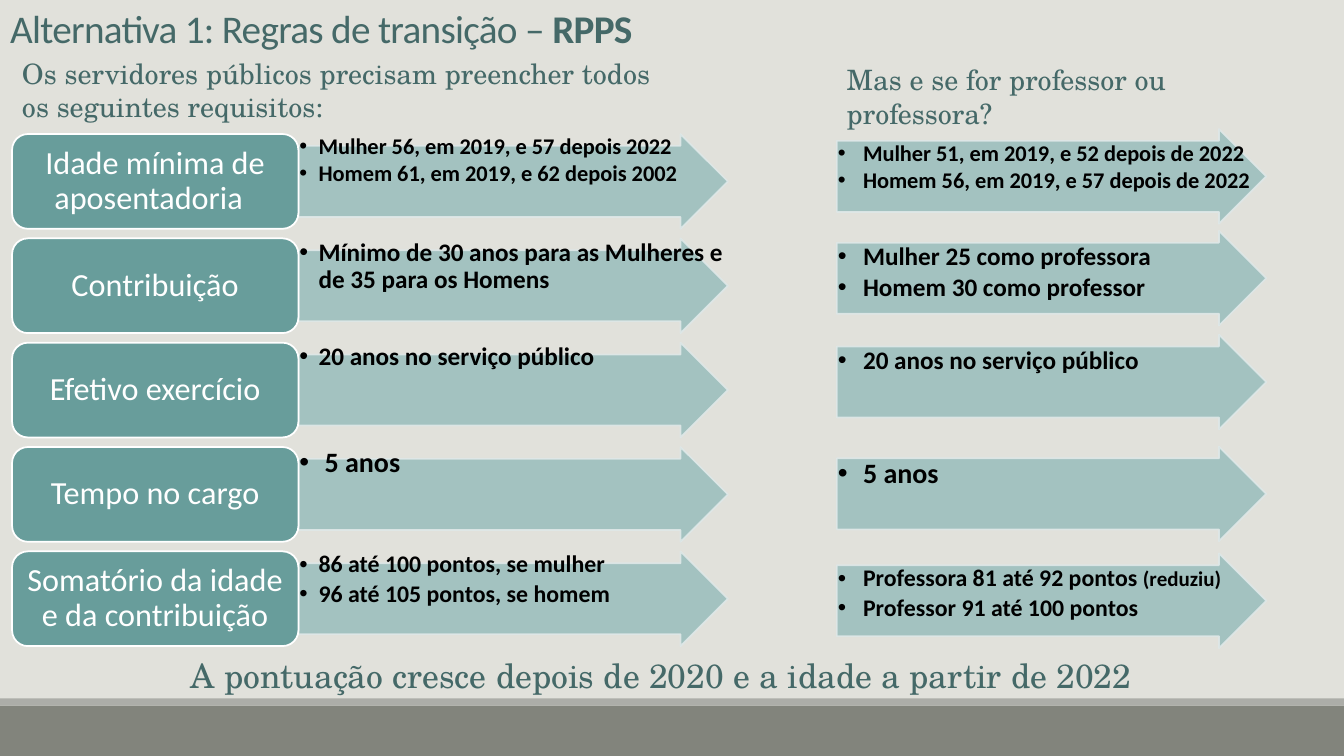
from lxml import etree
from pptx import Presentation
from pptx import util as u
from pptx.dml.color import RGBColor
from pptx.enum import shapes, text
from pptx.oxml.ns import qn

COLORS = {
    "background": "E1E1DB", "footer": "82847C", "footer_rule": "ACADA8",
    "heading": "456968", "label": "689D9B", "arrow": "9DBFBE",
    "arrow_line": "DFE8E8", "white": "FFFFFF", "black": "000000",
}
SANS, SERIF = "Calibri", "TeX Gyre Schola"
LABEL_W, ARROW_W, ROW_H = 2.84, 4.26, 0.94
ROW_TOP, ROW_STEP = 1.33, 1.035

# label, bullet size, bullet indent, bullets
SERVANT_ROWS = [
    ("Idade mínima de aposentadoria \t", 16, 0.19,
     ["Mulher 56, em 2019, e 57 depois 2022", "Homem 61, em 2019, e 62 depois 2002"]),
    ("Contribuição", 18, 0.19,
     ["Mínimo de 30 anos para as Mulheres e de 35 para os Homens"]),
    ("Efetivo exercício", 18, 0.19, ["20 anos no serviço público"]),
    ("Tempo no cargo", 20, 0.25, ["5 anos"]),
    ("Somatório da idade e da contribuição", 17, 0.19,
     ["86 até 100 pontos, se mulher", "96 até 105 pontos, se homem"]),
]
# top, bullet size, bullets
TEACHER_ROWS = [
    (1.28, 16, ["Mulher 51, em 2019, e 52 depois de 2022",
                "Homem 56, em 2019, e 57 depois de 2022"]),
    (2.29, 18, ["Mulher 25 como professora", "Homem 30 como professor"]),
    (3.32, 18, ["20 anos no serviço público"]),
    (4.43, 20, ["5 anos"]),
    (5.49, 17, [[("Professora 81 até 92 pontos ", {}), ("(reduziu)", {"size": 15})],
                "Professor 91 até 100 pontos"]),
]


def rgb(name):
    return RGBColor.from_string(COLORS[name])


def set_alpha(fill_parent, percent):
    color = fill_parent.find(qn("a:solidFill"))[0]
    etree.SubElement(color, qn("a:alpha")).set("val", str(percent * 1000))


def add_run(p, content, size=18, font=SANS, color="black", bold=False, spacing=None):
    r = p.add_run()
    r.text = content
    r.font.size = u.Pt(size)
    r.font.name = font
    r.font.bold = bold
    r.font.color.rgb = rgb(color)
    if spacing is not None:
        r.font._element.set("spc", str(int(spacing * 100)))


def add_bullet(p, indent):
    pPr = p._p.get_or_add_pPr()
    pPr.set("marL", str(u.Inches(indent)))
    pPr.set("indent", str(-u.Inches(indent)))
    etree.SubElement(pPr, qn("a:buFont")).set("typeface", "Arial")
    etree.SubElement(pPr, qn("a:buChar")).set("char", "•")


def write(s, paragraphs, align=text.PP_ALIGN.LEFT, anchor=text.MSO_ANCHOR.TOP,
          margins=(0.1, 0.05), line=None, after=0, indent=None, **fmt):
    """Fill a shape; a paragraph is a string or a list of (text, format) runs."""
    tf = s.text_frame
    tf.word_wrap = True
    tf.vertical_anchor = anchor
    tf.margin_left = tf.margin_right = u.Inches(margins[0])
    tf.margin_top = tf.margin_bottom = u.Inches(margins[1])
    for i, runs in enumerate(paragraphs):
        p = tf.add_paragraph() if i else tf.paragraphs[0]
        p.alignment = align
        if indent:
            add_bullet(p, indent)
        p.space_before = u.Pt(0)
        p.space_after = u.Pt(after)
        if line:
            p.line_spacing = line
        for content, extra in [(runs, {})] if isinstance(runs, str) else runs:
            add_run(p, content, **{**fmt, **extra})


def add_box(slide, kind, left, top, width, height, fill, line=None):
    s = slide.shapes.add_shape(kind, *map(u.Inches, (left, top, width, height)))
    s.shadow.inherit = False
    s.fill.solid()
    s.fill.fore_color.rgb = rgb(fill)
    if line:
        s.line.color.rgb = rgb(line)
        s.line.width = u.Pt(1.25)
    else:
        s.line.fill.background()
    return s


def add_text(slide, left, top, width, height, paragraphs, **fmt):
    s = slide.shapes.add_textbox(*map(u.Inches, (left, top, width, height)))
    write(s, paragraphs, **fmt)
    return s


def add_heading(slide, left, top, width, height, content, size=20):
    s = add_text(slide, left, top, width, height, [content],
                 size=size, font=SERIF, color="heading")
    s.text_frame.auto_size = text.MSO_AUTO_SIZE.SHAPE_TO_FIT_TEXT


def add_arrow(slide, left, top, bullets, size, indent, text_drop=0.0):
    arrow = add_box(slide, shapes.MSO_SHAPE.RIGHT_ARROW, left, top, ARROW_W, ROW_H,
                    "arrow", "arrow_line")
    arrow.adjustments[0], arrow.adjustments[1] = 0.75, 0.5
    spPr = arrow._element.spPr
    set_alpha(spPr, 90)
    set_alpha(spPr.find(qn("a:ln")), 90)
    add_text(slide, left, top + text_drop, ARROW_W, ROW_H - 2 * text_drop, bullets,
             margins=(0.01, 0.01), line=0.9, after=round(size * 0.15, 1),
             indent=indent, size=size, bold=True)


def add_servants(slide, left):
    add_heading(slide, left, 0.51, 6.67, 0.77,
                "Os servidores públicos precisam preencher todos os seguintes requisitos:")
    for i, (label, size, indent, bullets) in enumerate(SERVANT_ROWS):
        top = ROW_TOP + i * ROW_STEP
        add_arrow(slide, left + LABEL_W, top, bullets, size, indent)
        s = add_box(slide, shapes.MSO_SHAPE.ROUNDED_RECTANGLE, left, top, LABEL_W, ROW_H,
                    "label", "white")
        write(s, [label], align=text.PP_ALIGN.CENTER, anchor=text.MSO_ANCHOR.MIDDLE,
              line=0.9, size=23, color="white")


def add_teachers(slide, left):
    add_heading(slide, left, 0.57, 4.83, 0.44, "Mas e se for professor ou professora?")
    for top, size, bullets in TEACHER_ROWS:
        add_arrow(slide, left, top, bullets, size, 0.25, text_drop=0.12)


def add_title(slide, left, top, width, height):
    s = slide.shapes.title
    s.left, s.top, s.width, s.height = map(u.Inches, (left, top, width, height))
    write(s, [[("Alternativa 1: Regras de transição – ", {}), ("RPPS", {"bold": True})]],
          anchor=text.MSO_ANCHOR.BOTTOM, line=0.85, size=28, color="heading", spacing=-0.5)
    s.text_frame.auto_size = text.MSO_AUTO_SIZE.NONE


def add_footer(slide):
    add_box(slide, shapes.MSO_SHAPE.RECTANGLE, 0, 7, 13.33, 0.5, "footer")
    add_box(slide, shapes.MSO_SHAPE.RECTANGLE, 0, 6.93, 13.33, 0.07, "footer_rule")


def main():
    prs = Presentation()
    prs.slide_width, prs.slide_height = u.Inches(13.33), u.Inches(7.5)
    slide = prs.slides.add_slide(prs.slide_layouts[5])
    slide.background.fill.solid()
    slide.background.fill.fore_color.rgb = rgb("background")
    add_footer(slide)
    add_title(slide, 0, 0, 11.37, 0.56)
    add_servants(slide, 0.12)
    add_teachers(slide, 8.3)
    add_heading(slide, 1.79, 6.45, 9.75, 0.5,
                "A pontuação cresce depois de 2020 e a idade a partir de 2022", size=24)
    prs.save("out.pptx")


if __name__ == "__main__":
    main()
